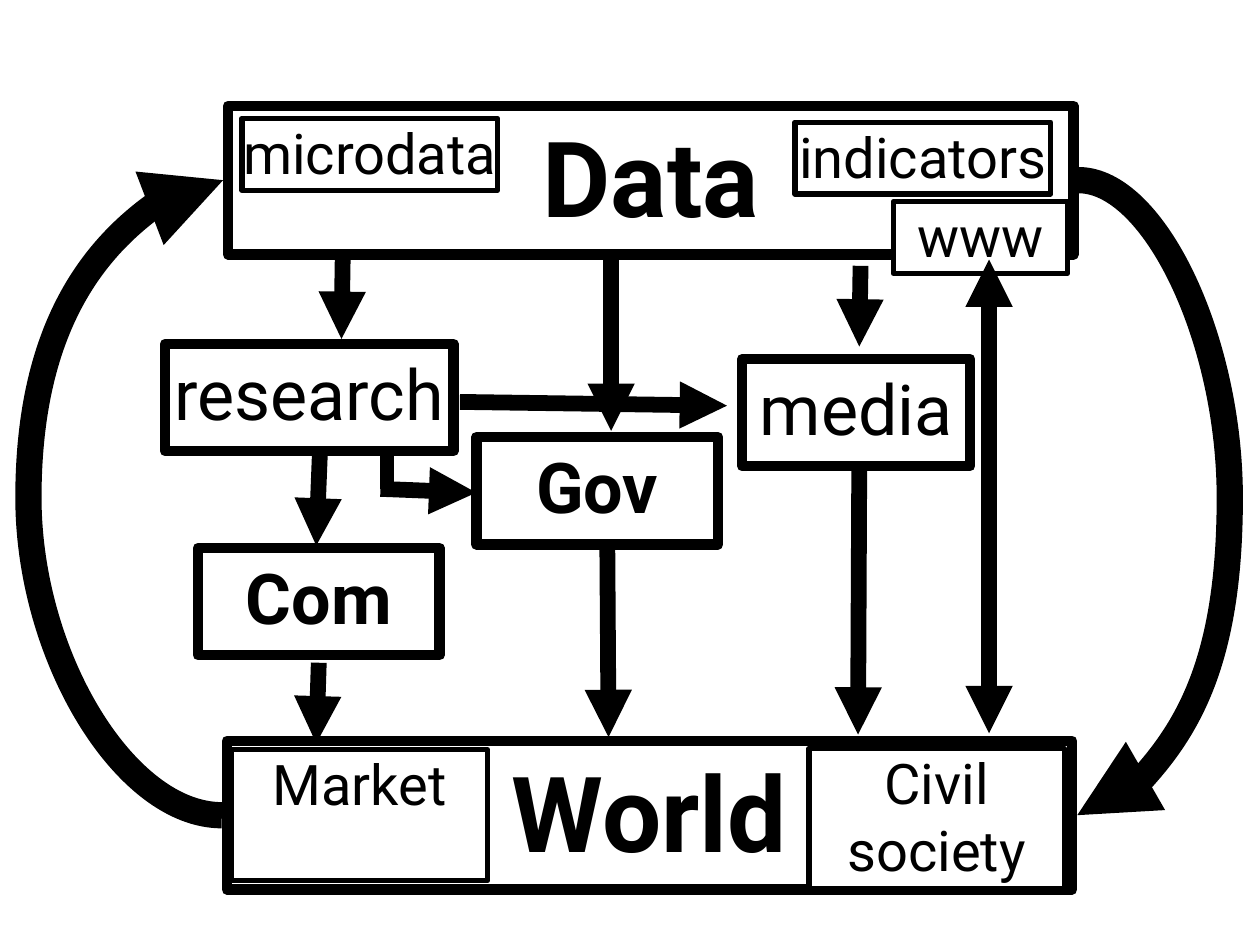
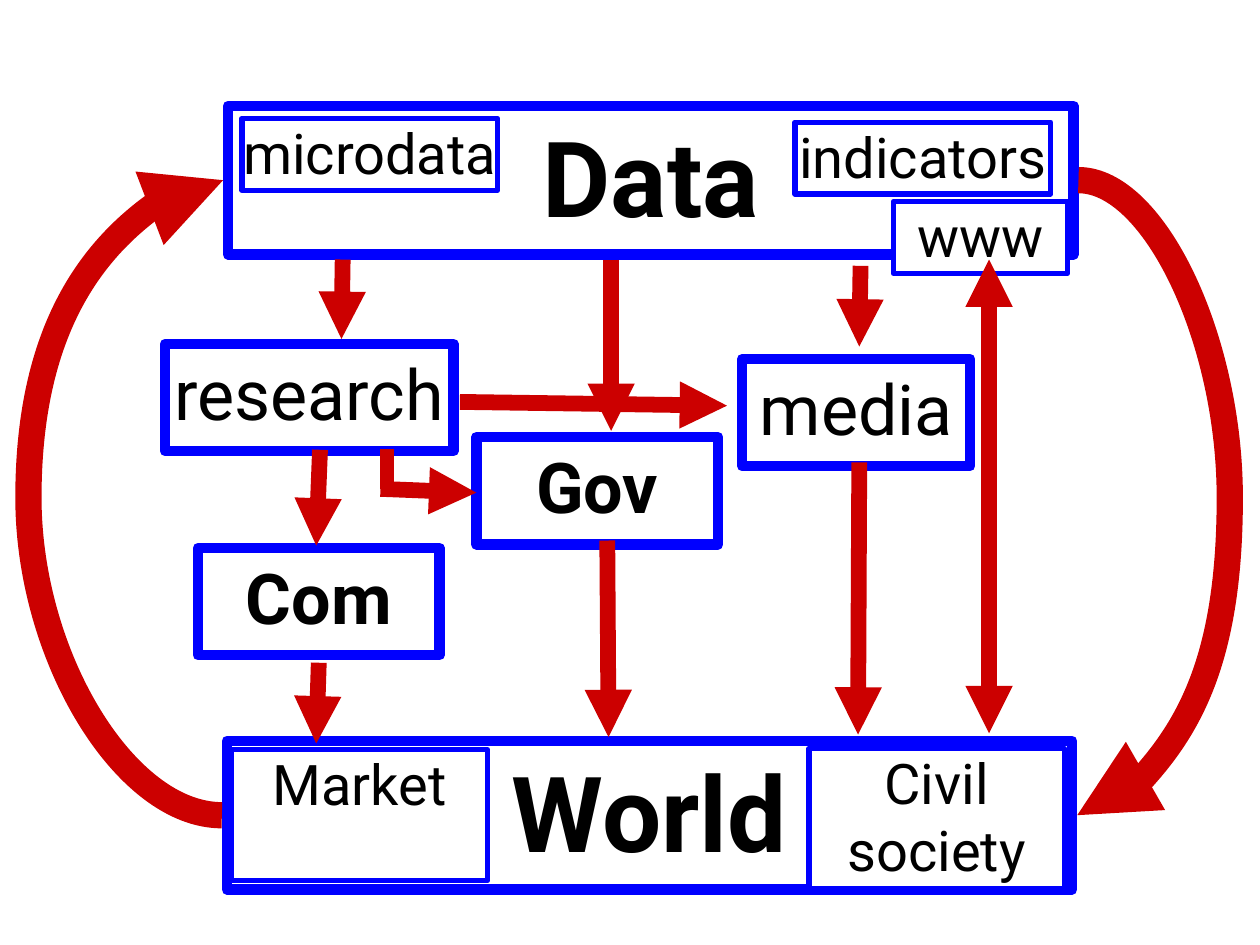
from lxml import etree
from pptx import Presentation
from pptx.dml.color import RGBColor
from pptx.enum.shapes import MSO_CONNECTOR, MSO_SHAPE
from pptx.enum.text import MSO_ANCHOR, MSO_AUTO_SIZE, PP_ALIGN
from pptx.oxml.ns import qn
from pptx.util import Inches, Pt

RECTANGLE = MSO_SHAPE.RECTANGLE
STRAIGHT = MSO_CONNECTOR.STRAIGHT
CURVE = MSO_CONNECTOR.CURVE
CENTER = PP_ALIGN.CENTER
TOP = MSO_ANCHOR.TOP
GROW = MSO_AUTO_SIZE.SHAPE_TO_FIT_TEXT

BLACK = RGBColor(0x00, 0x00, 0x00)
WHITE = RGBColor(0xFF, 0xFF, 0xFF)
BLUE = RGBColor(0x00, 0x00, 0xFF)
RED = RGBColor(0xCC, 0x00, 0x00)
FONT = "Roboto"

BOX_STYLES = {
    "layer": {"size": 60, "bold": True, "line": 6, "fill": None, "insets": (0.1, 0.05)},
    "actor": {"size": 40, "bold": True, "line": 6, "fill": WHITE, "insets": (0.02, 0.05)},
    "channel": {"size": 40, "bold": False, "line": 6, "fill": WHITE, "insets": (0.02, 0.05)},
    "part": {"size": 32, "bold": False, "line": 3, "fill": WHITE, "insets": (0, 0)},
}

LAYERS = [
    ("World", "layer", 1.8, 5.88, 6.71, 1.18),
    ("Data", "layer", 1.81, 0.84, 6.71, 1.18),
]
ACTORS = [
    ("Gov", "actor", 3.78, 3.47, 1.92, 0.85),
    ("Com", "actor", 1.57, 4.35, 1.92, 0.85),
    ("media", "channel", 5.89, 2.85, 1.81, 0.85),
    ("research", "channel", 1.31, 2.73, 2.29, 0.85),
]
WEB = [("www", "part", 7.09, 1.6, 1.38, 0.57)]
PARTS = [
    ("microdata", "part", 1.92, 0.94, 2.03, 0.57),
    ("indicators", "part", 6.31, 0.97, 2.03, 0.57),
    ("Market", "part", 1.84, 5.95, 2.03, 1.04),
    ("Civil\nsociety", "part", 6.42, 5.94, 2.03, 1.11),
]

FEEDBACK_LOOPS = [
    (1.77, 1.43, 1.76, 6.47, 180, -156),
    (8.56, 1.43, 8.55, 6.47, 0, -122),
]
FLOWS = [
    (4.85, 2.06, 4.85, 3.42),
    (4.82, 4.29, 4.83, 5.85),
    (2.72, 2.06, 2.71, 2.69),
    (6.83, 2.11, 6.82, 2.75),
    (2.53, 5.26, 2.51, 5.9),
    (6.82, 3.67, 6.81, 5.83),
    (2.54, 3.57, 2.51, 4.33),
]
GOV_ELBOW = (3.07, 3.56, 3.07, 3.88)
GOV_ARROW = (3.02, 3.88, 3.78, 3.91)
WEB_DOWN = (7.85, 2.19, 7.85, 5.82)
RESEARCH_TO_MEDIA = (3.65, 3.19, 5.77, 3.22)
WEB_UP = (7.85, 5.11, 7.85, 2.06)


def add_boxes(slide, boxes, color):
    for text, style_name, left, top, width, height in boxes:
        style = BOX_STYLES[style_name]
        shape = slide.shapes.add_shape(
            RECTANGLE, Inches(left), Inches(top), Inches(width), Inches(height))
        shape.shadow.inherit = False
        if style["fill"] is None:
            shape.fill.background()
        else:
            shape.fill.solid()
            shape.fill.fore_color.rgb = style["fill"]
        shape.line.color.rgb = color
        shape.line.width = Pt(style["line"])
        side, end = style["insets"]
        frame = shape.text_frame
        frame.text = text
        frame_format = {
            "word_wrap": True, "auto_size": GROW, "vertical_anchor": TOP,
            "margin_left": Inches(side), "margin_right": Inches(side),
            "margin_top": Inches(end), "margin_bottom": Inches(end),
        }
        for name, value in frame_format.items():
            setattr(frame, name, value)
        font_format = {"name": FONT, "size": Pt(style["size"]), "bold": style["bold"]}
        for paragraph in frame.paragraphs:
            paragraph.alignment = CENTER
            font = paragraph.runs[0].font
            for name, value in font_format.items():
                setattr(font, name, value)
            font.color.rgb = BLACK


def add_line(slide, points, color, width=9, kind=STRAIGHT, arrow=True):
    connector = slide.shapes.add_connector(kind, *[Inches(value) for value in points])
    connector.line.color.rgb = color
    connector.line.width = Pt(width)
    properties = connector._element.spPr
    if arrow:
        etree.SubElement(properties.find(qn("a:ln")), qn("a:tailEnd"), type="triangle")
    etree.SubElement(properties, qn("a:effectLst"))
    return properties


presentation = Presentation()
presentation.slide_width = Inches(10)
presentation.slide_height = Inches(7.5)

for box_color, arrow_color in [(BLACK, BLACK), (BLUE, RED)]:
    slide = presentation.slides.add_slide(presentation.slide_layouts[6])
    slide.background.fill.solid()
    slide.background.fill.fore_color.rgb = WHITE

    add_boxes(slide, LAYERS, box_color)
    for *points, rotation, bend in FEEDBACK_LOOPS:
        properties = add_line(slide, points, arrow_color, width=15, kind=CURVE)
        properties.find(qn("a:xfrm")).set("rot", str(rotation * 60000))
        geometry = properties.find(qn("a:prstGeom"))
        adjustments = geometry.find(qn("a:avLst"))
        if adjustments is None:
            adjustments = etree.SubElement(geometry, qn("a:avLst"))
        etree.SubElement(adjustments, qn("a:gd"), name="adj1", fmla=f"val {bend * 100000}")

    add_boxes(slide, ACTORS, box_color)
    for points in FLOWS:
        add_line(slide, points, arrow_color)
    add_line(slide, GOV_ELBOW, arrow_color, width=8, arrow=False)
    add_line(slide, GOV_ARROW, arrow_color)

    add_boxes(slide, WEB, box_color)
    add_line(slide, WEB_DOWN, arrow_color)
    add_boxes(slide, PARTS, box_color)
    add_line(slide, RESEARCH_TO_MEDIA, arrow_color)
    add_line(slide, WEB_UP, arrow_color)

presentation.save("out.pptx")
